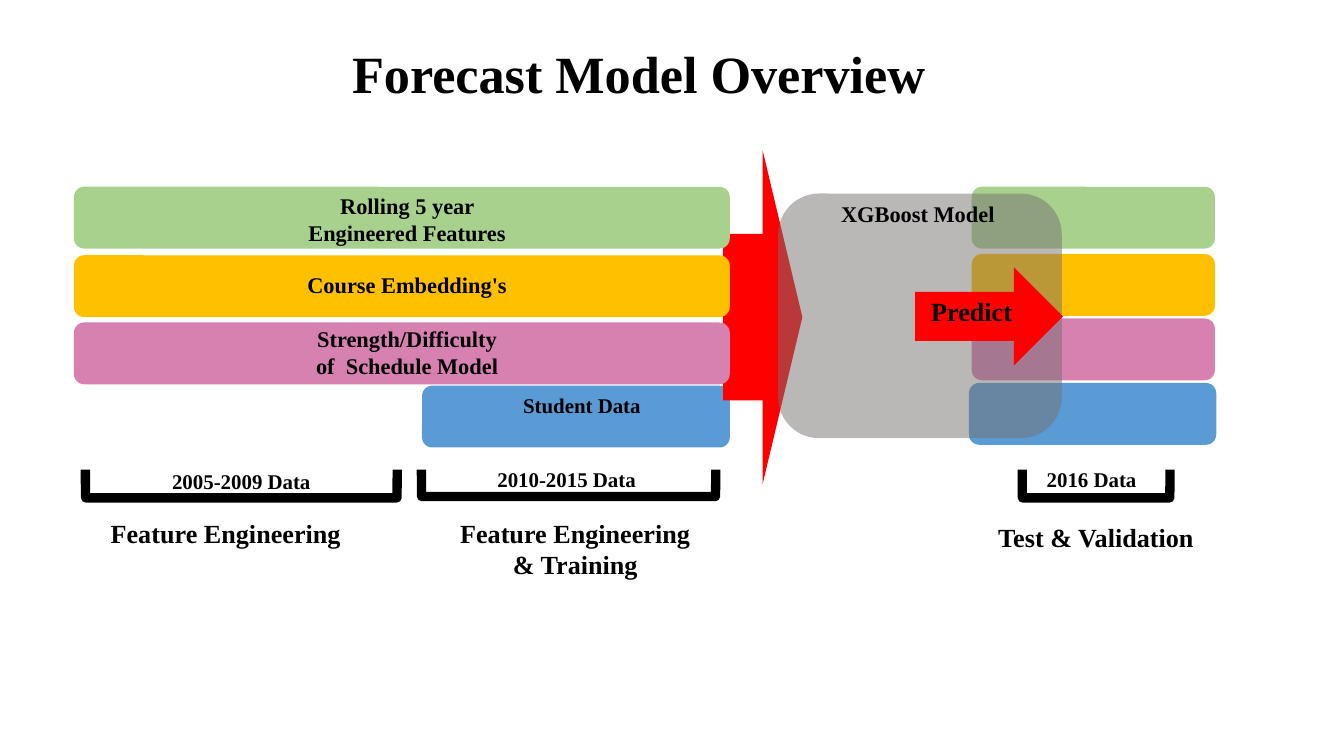
from typing import NamedTuple

from lxml.etree import SubElement
from pptx import Presentation
from pptx.dml.color import RGBColor
from pptx.enum.shapes import MSO_SHAPE as Kind
from pptx.enum.text import MSO_ANCHOR as Anchor, MSO_AUTO_SIZE as Fit, PP_ALIGN as Align
from pptx.oxml.ns import qn
from pptx.util import Emu, Pt

SCALE = 9144  # EMU per px, 100 px to the inch
WIDTH = 1000 * SCALE
HEIGHT = WIDTH * 9 // 16
FACE = "Times New Roman"
BLACK = RGBColor(0x00, 0x00, 0x00)
GREEN = RGBColor(0xA9, 0xD1, 0x8E)
GOLD = RGBColor(0xFF, 0xC0, 0x00)
PINK = RGBColor(0xD7, 0x81, 0xB1)
BLUE = RGBColor(0x5B, 0x9B, 0xD5)
RED = RGBColor(0xFF, 0x00, 0x00)
GREY = RGBColor(0x76, 0x71, 0x71)


class Box(NamedTuple):
    left: int
    top: int
    width: int
    height: int


class Block(NamedTuple):
    box: Box
    fill: RGBColor
    kind: Kind = Kind.ROUNDED_RECTANGLE
    alpha: int = 100


class Label(NamedTuple):
    text: str
    box: Box
    size: float
    align: Align = Align.CENTER


BAR = 46
# Back to front: the big arrow covers the student bar and sits under the others.
BLOCKS = [
    Block(Box(314, 287, 229, BAR), BLUE),
    Block(Box(538, 112, 59, 248), RED, Kind.RIGHT_ARROW),
    *(Block(Box(55, top, 488, BAR), fill)
      for top, fill in ((240, PINK), (190, GOLD), (139, GREEN))),
    *(Block(Box(723, top, 181, BAR), fill)
      for top, fill in ((139, GREEN), (189, GOLD), (237, PINK))),
    Block(Box(721, 285, 184, BAR), BLUE),
    Block(Box(579, 144, 211, 182), GREY, alpha=50),
    Block(Box(681, 199, 110, 73), RED, Kind.RIGHT_ARROW),
]

# Each bracket as it stands on the slide, open side up.
SPANS = [Box(64, 349, 232, 21), Box(314, 349, 219, 20), Box(761, 349, 110, 21)]

LABELS = [
    Label("Rolling 5 year Engineered Features", Box(218, 138, 170, 50), 12),
    Label("Course Embedding's", Box(218, 197, 170, 30), 12),
    Label("Strength/Difficulty of  Schedule Model", Box(218, 237, 170, 50), 12),
    Label("Student Data", Box(348, 287, 170, 29), 11.2),
    Label("XGBoost Model", Box(598, 144, 170, 30), 12),
    Label("Predict", Box(683, 215, 102, 40), 14, Align.LEFT),
    Label("2005-2009 Data", Box(52, 344, 255, 29), 11.2),
    Label("2010-2015 Data", Box(294, 342, 255, 29), 11.2),
    Label("2016 Data", Box(769, 342, 116, 29), 11.2, Align.LEFT),
    Label("Feature Engineering", Box(64, 380, 208, 34), 14),
    Label("Feature Engineering & Training", Box(324, 380, 208, 57), 14),
    Label("Test & Validation", Box(728, 383, 175, 34), 14),
]
TITLE = Label("Forecast Model Overview", Box(252, 26, 532, 57), 28, Align.LEFT)


def emu(box: Box) -> list[Emu]:
    return [Emu(px * SCALE) for px in box]


def draw_block(slide, block: Block) -> None:
    shape = slide.shapes.add_shape(block.kind, *emu(block.box))
    shape.shadow.inherit = False
    shape.line.fill.background()
    shape.fill.solid()
    shape.fill.fore_color.rgb = block.fill
    if block.alpha < 100:
        tint = shape.fill._xPr.find(f"{qn('a:solidFill')}/{qn('a:srgbClr')}")
        SubElement(tint, qn("a:alpha"), val=str(block.alpha * 1000))


def draw_span(slide, span: Box) -> None:
    """Turn a right bracket a quarter so that it opens upward over the span."""
    left, top, width, height = span
    shift = (width - height) // 2
    upright = Box(left + shift, top - shift, height, width)
    shape = slide.shapes.add_shape(Kind.RIGHT_BRACKET, *emu(upright))
    shape.adjustments[0] = 0.01
    shape.rotation = 90
    shape.shadow.inherit = False
    shape.fill.background()
    shape.line.color.rgb = BLACK
    shape.line.width = Pt(5)


def write(shape, label: Label) -> None:
    frame = shape.text_frame
    frame.text = label.text
    frame.word_wrap = True
    frame.auto_size = Fit.NONE
    frame.vertical_anchor = Anchor.TOP
    para = frame.paragraphs[0]
    para.alignment = label.align
    font = para.font
    font.name, font.size, font.bold = FACE, Pt(label.size), True
    font.color.rgb = BLACK


def main() -> None:
    deck = Presentation()
    deck.slide_width, deck.slide_height = Emu(WIDTH), Emu(HEIGHT)
    slide = deck.slides.add_slide(deck.slide_layouts[5])
    title = slide.shapes.title
    title.left, title.top, title.width, title.height = emu(TITLE.box)
    write(title, TITLE)
    for block in BLOCKS:
        draw_block(slide, block)
    for span in SPANS:
        draw_span(slide, span)
    for label in LABELS:
        write(slide.shapes.add_textbox(*emu(label.box)), label)
    deck.save("out.pptx")


if __name__ == "__main__":
    main()
